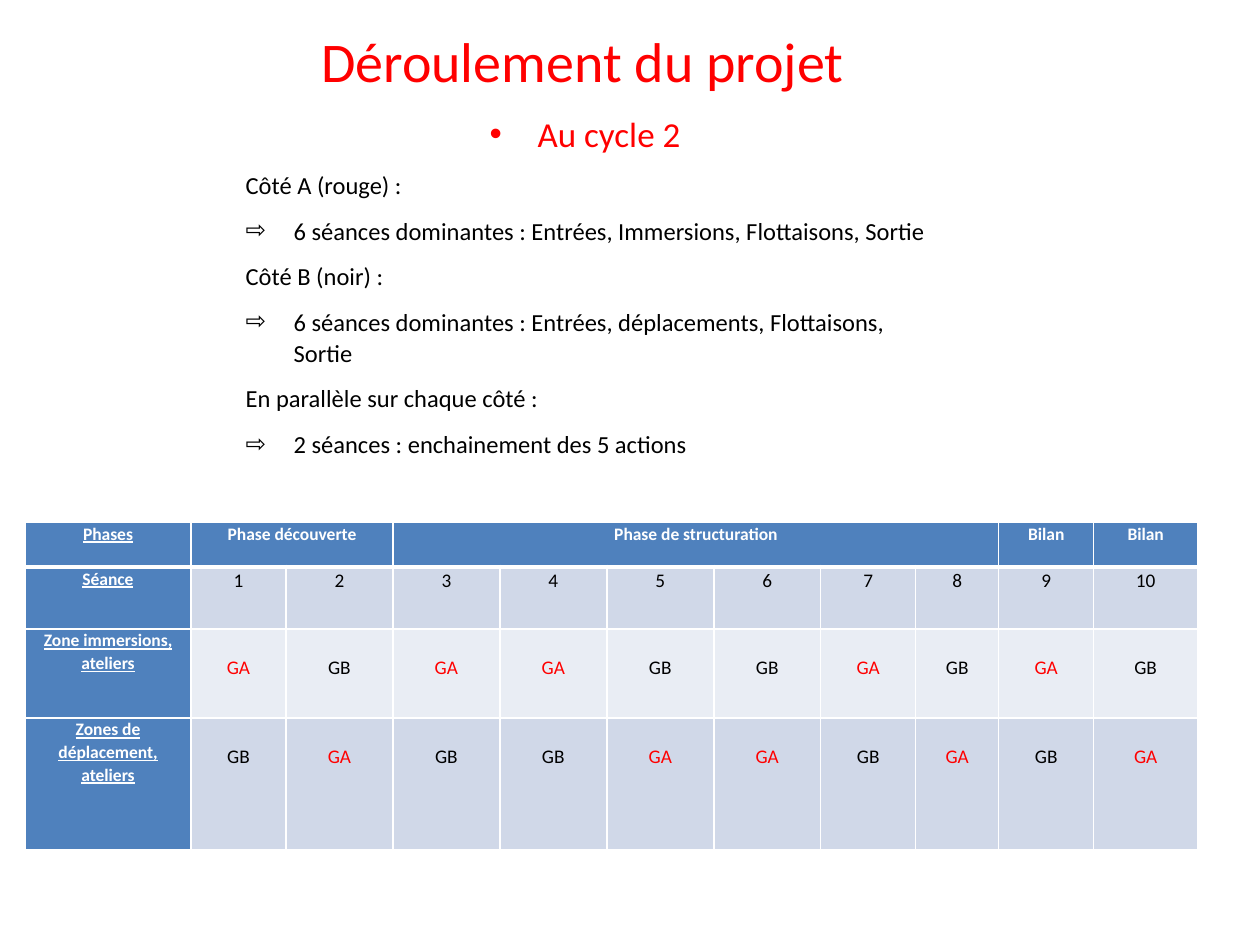
"""Build the slide on how the swimming project unfolds in cycle 2."""
from dataclasses import dataclass

from lxml.etree import SubElement, Element
from pptx import Presentation
from pptx.dml.color import RGBColor
from pptx.enum.text import MSO_ANCHOR as Anchor, MSO_AUTO_SIZE as AutoSize, PP_ALIGN as Align
from pptx.oxml.ns import qn
from pptx.util import Emu, Pt

COLORS = {
    "red": "FF0000",
    "black": "000000",
    "white": "FFFFFF",
    "header": "4F81BD",
    "band": "D0D8E8",
    "light": "E9EDF4",
}
FONT = "Calibri"
LINE_SPACING = 1.07
PARAGRAPH_GAP = 8
BULLET_INDENT = 48
CELL_INSET = 9
GROUP_INSET = 25
COLUMN_WIDTHS = [166, 95, 107, 107, 107, 107, 107, 95, 83, 95, 104]


@dataclass(frozen=True)
class Box:
    left: int
    top: int
    width: int
    height: int


@dataclass(frozen=True)
class Line:
    text: str
    bullet: str = ""
    size: int = 14
    color: str = "black"
    align: Align = Align.LEFT


@dataclass(frozen=True)
class Phase:
    name: str
    first: int
    last: int


@dataclass(frozen=True)
class Row:
    heading: str
    height: int
    fill: str
    entries: tuple[str, ...]
    inset: int = 0


TITLE_BOX = Box(233, 16, 712, 88)
PLAN_BOX = Box(233, 103, 712, 364)
TABLE_BOX = Box(25, 522, sum(COLUMN_WIDTHS), 328)
HEADER_HEIGHT = 45

PLAN = [
    Line("Au cycle 2 ", "•", 20, "red", Align.CENTER),
    Line("Côté A (rouge) :"),
    Line("6 séances dominantes : Entrées, Immersions, Flottaisons, Sortie", "⇨"),
    Line("Côté B (noir) :"),
    Line("6 séances dominantes : Entrées, déplacements, Flottaisons, Sortie", "⇨"),
    Line("En parallèle sur chaque côté :"),
    Line("2 séances : enchainement des 5 actions", "⇨"),
]
PHASES = [
    Phase("Phases", 0, 0),
    Phase("Phase découverte", 1, 2),
    Phase("Phase de structuration", 3, 8),
    Phase("Bilan", 9, 9),
    Phase("Bilan", 10, 10),
]
IMMERSION_GROUPS = tuple("GA GB GA GA GB GB GA GB GA GB".split())
MOVEMENT_GROUPS = tuple("GB" if group == "GA" else "GA" for group in IMMERSION_GROUPS)
ROWS = [
    Row("Séance", 62, "band", tuple(str(number) for number in range(1, 11))),
    Row("Zone immersions, ateliers", 89, "light", IMMERSION_GROUPS, GROUP_INSET),
    Row("Zones de déplacement, ateliers", 132, "band", MOVEMENT_GROUPS, GROUP_INSET),
]


def px(length: int) -> Emu:
    return Emu(round(length * 914400 / 126))


def write(paragraph, text: str, *, size: int, color: str, align: Align = Align.CENTER,
          bold: bool = False, underline: bool = False, after: int = 0,
          bullet: str = "") -> None:
    paragraph.alignment = align
    paragraph.line_spacing = LINE_SPACING
    paragraph.space_before = Pt(0)
    paragraph.space_after = Pt(after)
    properties = paragraph._p.get_or_add_pPr()
    indent = px(BULLET_INDENT) if bullet else 0
    properties.set("marL", str(indent))
    properties.set("indent", str(-indent))
    if bullet:
        SubElement(properties, qn("a:buChar")).set("char", bullet)
    else:
        SubElement(properties, qn("a:buNone"))
    run = paragraph.add_run()
    run.text = text
    run.font.name = FONT
    run.font.size = Pt(size)
    run.font.bold = bold
    run.font.underline = underline
    run.font.color.rgb = RGBColor.from_string(COLORS[color])


def place(placeholder, box: Box):
    placeholder.left, placeholder.top = px(box.left), px(box.top)
    placeholder.width, placeholder.height = px(box.width), px(box.height)
    frame = placeholder.text_frame
    frame.word_wrap = True
    frame.auto_size = AutoSize.NONE
    frame.vertical_anchor = Anchor.TOP
    return frame


def style_cell(cell, fill: str, *, inset: int = 0, top: int = 1, bottom: int = 1) -> None:
    cell.margin_left = cell.margin_right = px(CELL_INSET)
    cell.margin_top, cell.margin_bottom = px(inset), 0
    cell.fill.solid()
    cell.fill.fore_color.rgb = RGBColor.from_string(COLORS[fill])
    properties = cell._tc.get_or_add_tcPr()
    for position, (side, width) in enumerate(
            {"lnL": 1, "lnR": 1, "lnT": top, "lnB": bottom}.items()):
        border = Element(qn(f"a:{side}"), w=str(Pt(width)))
        paint = SubElement(border, qn("a:solidFill"))
        SubElement(paint, qn("a:srgbClr")).set("val", COLORS["white"])
        properties.insert(position, border)


def add_schedule(slide) -> None:
    schedule = slide.shapes.add_table(
        len(ROWS) + 1, len(COLUMN_WIDTHS), px(TABLE_BOX.left), px(TABLE_BOX.top),
        px(TABLE_BOX.width), px(TABLE_BOX.height)).table
    for column, width in zip(schedule.columns, COLUMN_WIDTHS):
        column.width = px(width)
    for line, height in zip(schedule.rows, [HEADER_HEIGHT, *(row.height for row in ROWS)]):
        line.height = px(height)
    for column in range(len(COLUMN_WIDTHS)):
        style_cell(schedule.cell(0, column), "header", bottom=3)
    for phase in PHASES:
        cell = schedule.cell(0, phase.first)
        if phase.last > phase.first:
            cell.merge(schedule.cell(0, phase.last))
        write(cell.text_frame.paragraphs[0], phase.name, size=10, color="white",
              bold=True, underline=phase.first == 0)
    for index, row in enumerate(ROWS, 1):
        top = 3 if index == 1 else 1
        heading = schedule.cell(index, 0)
        style_cell(heading, "header", top=top)
        write(heading.text_frame.paragraphs[0], row.heading, size=10, color="white",
              bold=True, underline=True)
        for column, entry in enumerate(row.entries, 1):
            cell = schedule.cell(index, column)
            style_cell(cell, row.fill, inset=row.inset, top=top)
            write(cell.text_frame.paragraphs[0], entry, size=11,
                  color="red" if entry == "GA" else "black")


def main() -> None:
    deck = Presentation()
    deck.slide_width, deck.slide_height = px(1260), px(945)
    slide = deck.slides.add_slide(deck.slide_layouts[1])
    title = place(slide.shapes.title, TITLE_BOX)
    write(title.paragraphs[0], "Déroulement du projet ", size=32, color="red",
          after=PARAGRAPH_GAP)
    plan = place(slide.placeholders[1], PLAN_BOX)
    for index, line in enumerate(PLAN):
        paragraph = plan.add_paragraph() if index else plan.paragraphs[0]
        write(paragraph, line.text, size=line.size, color=line.color, align=line.align,
              after=PARAGRAPH_GAP, bullet=line.bullet)
    add_schedule(slide)
    deck.save("out.pptx")


if __name__ == "__main__":
    main()
